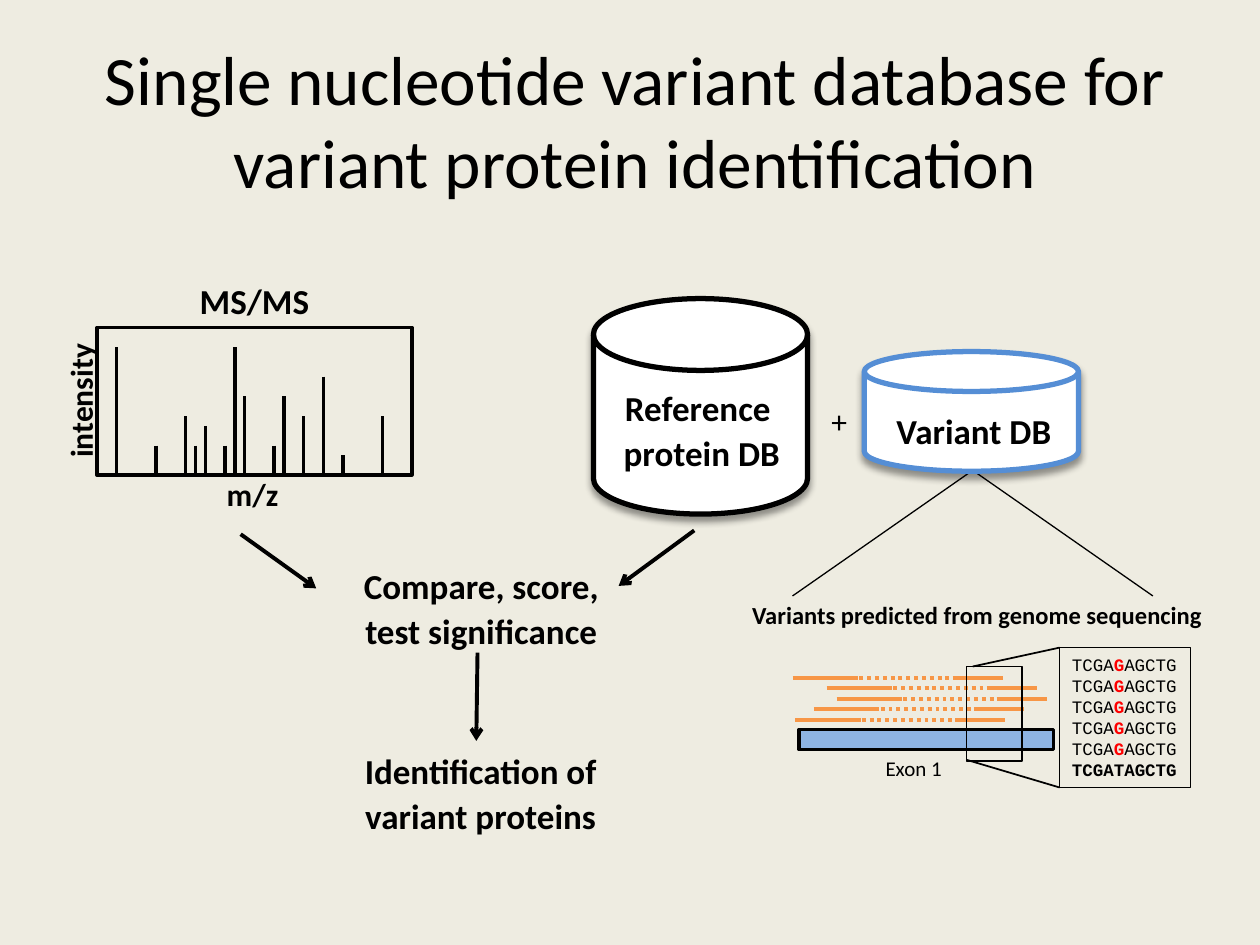
from dataclasses import dataclass

from lxml import etree
from pptx import Presentation
from pptx import util as u
from pptx.dml.color import RGBColor
from pptx.enum import dml, shapes, text
from pptx.oxml import ns

BLACK = RGBColor(0x00, 0x00, 0x00)
WHITE = RGBColor(0xFF, 0xFF, 0xFF)
CREAM = RGBColor(0xEE, 0xEC, 0xE1)
ORANGE = RGBColor(0xF7, 0x96, 0x46)
RED = RGBColor(0xFF, 0x00, 0x00)
BLUE = RGBColor(0x55, 0x8E, 0xD5)
PALE_BLUE = RGBColor(0x8E, 0xB4, 0xE3)

CENTER, LEFT = text.PP_ALIGN.CENTER, text.PP_ALIGN.LEFT
RECT = shapes.MSO_SHAPE.RECTANGLE
DISK = shapes.MSO_SHAPE.FLOWCHART_MAGNETIC_DISK

# Column and height of each peak, on the 32 x 15 grid of the spectrum
PEAKS = {2: 13, 6: 3, 9: 6, 10: 3, 11: 5, 13: 3, 14: 13, 15: 8,
         18: 3, 19: 8, 21: 6, 23: 10, 25: 2, 29: 6}
READ_STARTS = (4.2, 6.9, 7.7, 5.9, 4.4)


@dataclass
class Grid:
    """A region in inches, divided into columns and rows."""
    left: float
    top: float
    width: float
    height: float
    cols: int
    rows: int

    def point(self, col, row):
        return (u.Inches(self.left + col * self.width / self.cols),
                u.Inches(self.top + row * self.height / self.rows))

    def box(self, col, row, cols, rows):
        return (*self.point(col, row),
                u.Inches(cols * self.width / self.cols),
                u.Inches(rows * self.height / self.rows))


def style_run(r, size, color=BLACK, bold=False, name="Calibri"):
    r.font.size, r.font.bold, r.font.name = u.Pt(size), bold, name
    r.font.color.rgb = color


def add_text(s, box, lines, size, bold=True, align=CENTER, spacing=None, wrap=False):
    sp = s.shapes.add_textbox(*box)
    tf = sp.text_frame
    tf.text = lines
    tf.word_wrap = wrap
    for p in tf.paragraphs:
        p.alignment = align
        p.line_spacing = spacing
        for r in p.runs:
            style_run(r, size, bold=bold)
    return sp


def add_heading(s, box, lines):
    return add_text(s, box, lines, 20, spacing=u.Pt(26), wrap=True)


def add_line(s, start, end, width, color=BLACK, arrow=False, dash=None):
    line = s.shapes.add_connector(shapes.MSO_CONNECTOR.STRAIGHT, *start, *end)
    line.line.width = u.Pt(width)
    line.line.color.rgb = color
    if dash:
        line.line.dash_style = dash
    if arrow:
        etree.SubElement(line.line._get_or_add_ln(), ns.qn("a:tailEnd"), type="arrow")
    etree.SubElement(line._element.spPr, ns.qn("a:effectLst"))


def add_outline(s, kind, box, width, color=BLACK, fill=None):
    sp = s.shapes.add_shape(kind, *box)
    sp.shadow.inherit = False
    if fill is None:
        sp.fill.background()
    else:
        sp.fill.solid()
        sp.fill.fore_color.rgb = fill
    sp.line.width = u.Pt(width)
    sp.line.color.rgb = color
    return sp


def add_disk(s, box, color):
    """Draw a database cylinder with a soft shadow below it."""
    sp = add_outline(s, DISK, box, 3, color, WHITE)
    effects = sp._element.spPr.find(ns.qn("a:effectLst"))
    shadow = etree.SubElement(effects, ns.qn("a:outerShdw"), blurRad=str(u.Pt(4)),
                              dist=str(u.Pt(3)), dir="5400000", rotWithShape="0")
    tint = etree.SubElement(shadow, ns.qn("a:srgbClr"), val=str(BLACK))
    etree.SubElement(tint, ns.qn("a:alpha"), val="40000")


def fill_title(s, box):
    sp = s.shapes.title
    sp.left, sp.top, sp.width, sp.height = box
    tf = sp.text_frame
    tf.text = "Single nucleotide variant database for variant protein identification"
    tf.vertical_anchor = text.MSO_ANCHOR.MIDDLE
    tf.auto_size = text.MSO_AUTO_SIZE.NONE
    tf.margin_bottom = u.Inches(0.71)
    tf.paragraphs[0].alignment = CENTER
    style_run(tf.paragraphs[0].runs[0], 39.6)


def add_flow(s, g):
    add_line(s, g.point(0.1, 0.4), g.point(6.1, 4.7), 2.25, arrow=True)
    add_line(s, g.point(36.1, 0.1), g.point(30.1, 4.5), 2.25, arrow=True)
    add_heading(s, g.box(6.9, 2, 24.6, 8.3), "Compare, score, test significance")
    add_line(s, g.point(18.9, 9.8), g.point(18.8, 16.8), 2.25, arrow=True)
    add_heading(s, g.box(6, 16.7, 26.3, 8.3), "Identification of variant proteins")


def add_spectrum(s, g):
    add_outline(s, RECT, g.box(0, 0, g.cols, g.rows), 2)
    for col, height in PEAKS.items():
        add_line(s, g.point(col, g.rows - height), g.point(col, g.rows), 2)
    add_text(s, g.box(11.8, 14.4, 8, 5.1), "m/z", 18)
    add_text(s, g.box(-8.8, 4.9, 14.2, 5.1), "intensity", 18).rotation = 270
    add_text(s, g.box(9.1, -5.5, 13.8, 5.6), "MS/MS", 20)


def add_read_pair(s, g, col, row):
    """Draw two sequenced ends joined by a dotted gap."""
    parts = ((0, 5.2, None), (12.7, 16.7, None),
             (5.3, 12.7, dml.MSO_LINE.ROUND_DOT))
    for start, end, dash in parts:
        add_line(s, g.point(col + start, row), g.point(col + end, row),
                 2.25, ORANGE, dash=dash)


def add_sequences(s, box):
    sp = add_text(s, box, "\n".join(["TCGA"] * 5 + ["TCGATAGCTG"]), 10,
                  bold=False, align=LEFT)
    sp.line.width = u.Pt(0.75)
    sp.line.color.rgb = BLACK
    *variants, reference = sp.text_frame.paragraphs
    for p in variants:
        p.add_run().text = "G"
        p.add_run().text = "AGCTG"
        for r, color in zip(p.runs, (BLACK, RED, BLACK)):
            style_run(r, 10, color, color == RED, "Courier New")
    style_run(reference.runs[0], 10, bold=True, name="Courier New")


def add_variants(s, g):
    for i, col in enumerate(READ_STARTS):
        add_read_pair(s, g, col, 6.8 + i * 0.83)
    add_outline(s, RECT, g.box(4.7, 10.9, 20.2, 1.6), 2, fill=PALE_BLUE)
    add_outline(s, RECT, g.box(18, 5.9, 4.4, 7.5), 1)
    add_line(s, g.point(18.5, 5.9), g.point(25.4, 4.4), 1)
    add_line(s, g.point(18, 13.3), g.point(25.4, 15.5), 1)
    add_sequences(s, g.box(25.4, 4.4, 10.4, 11.1))
    add_text(s, g.box(10.6, 12.5, 6.6, 3), "Exon 1", 12, bold=False, align=LEFT)
    add_text(s, g.box(0, 0.1, 37.9, 3.4),
             "Variants predicted from genome sequencing", 14, align=LEFT)


def add_databases(s, g):
    add_disk(s, g.box(4.1, 0.7, 17, 17.1), BLACK)
    add_heading(s, g.box(0.4, 6.9, 24.6, 8.1), "Reference \nprotein DB")
    add_text(s, g.box(22, 8.4, 3.3, 4), "+", 18, bold=False, align=LEFT)
    for top, bottom in ((34.1, 19.9), (34.3, 48.5)):
        add_line(s, g.point(bottom, 24.3), g.point(top, 14.4), 0.75)
    add_disk(s, g.box(25.6, 4.9, 17, 9.5), BLUE)
    add_heading(s, g.box(22, 8.7, 24.6, 4.5), "Variant DB")


def main():
    prs = Presentation()
    prs.slide_width, prs.slide_height = u.Inches(10), u.Inches(7.5)
    s = prs.slides.add_slide(prs.slide_layouts[5])
    s.background.fill.solid()
    s.background.fill.fore_color.rgb = CREAM
    fill_title(s, Grid(0.54, 0.5, 9, 1.55, 1, 1).box(0, 0, 1, 1))
    add_flow(s, Grid(1.9, 4.2, 3.6, 2.5, 36, 25))
    add_spectrum(s, Grid(0.77, 2.6, 2.5, 1.17, 32, 15))
    add_variants(s, Grid(5.87, 4.7, 3.8, 1.6, 38, 16))
    add_databases(s, Grid(4.3, 2.3, 4.7, 1.8, 47, 18))
    prs.save("out.pptx")


if __name__ == "__main__":
    main()
